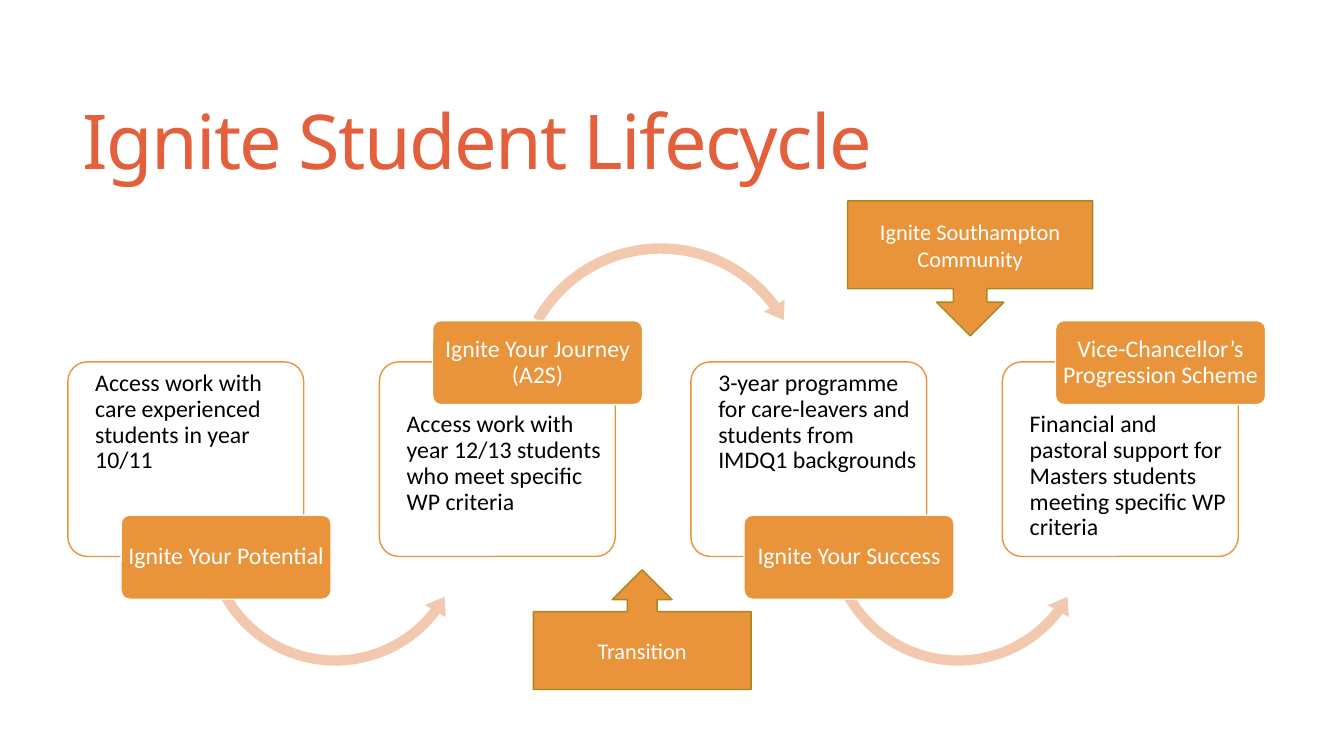
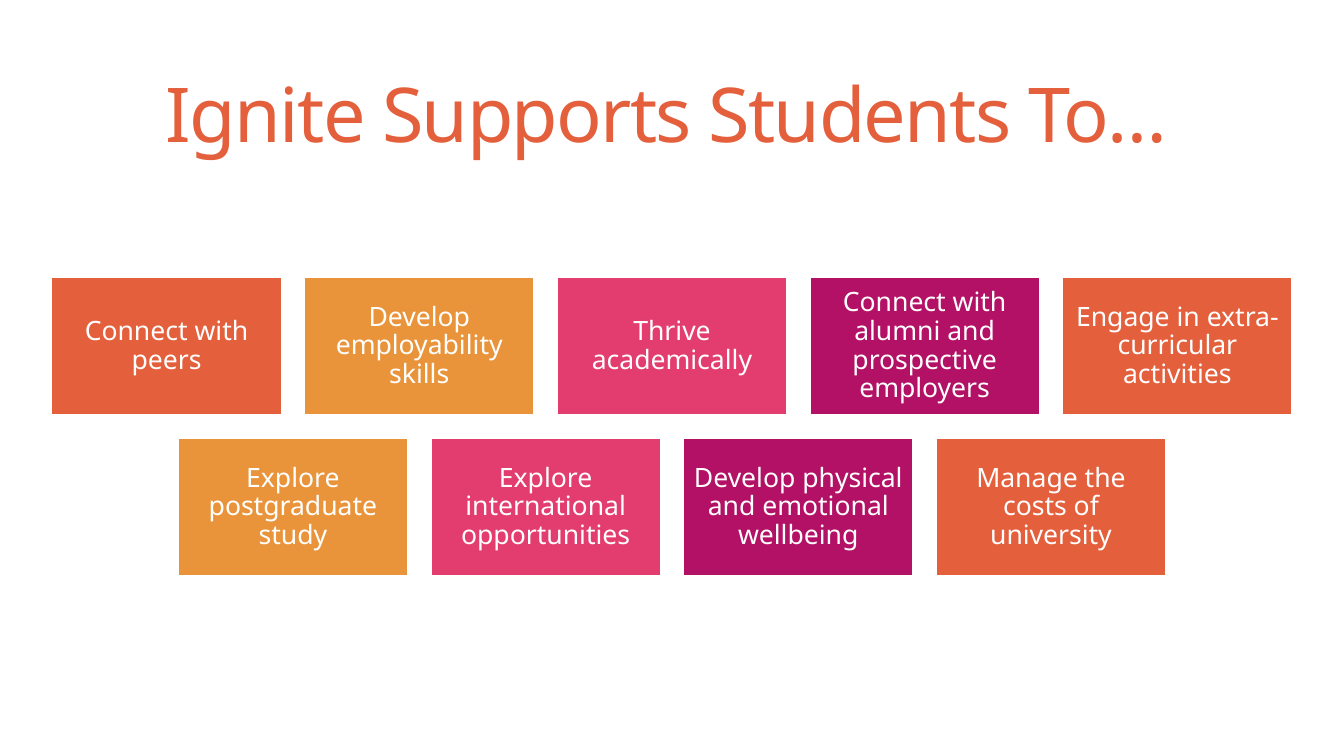
from pptx import Presentation
from pptx.dml.color import RGBColor
from pptx.enum.shapes import MSO_SHAPE
from pptx.enum.text import MSO_ANCHOR, PP_ALIGN
from pptx.util import Pt

CORAL, ORANGE, PINK, PURPLE = "E45F3C", "E9943A", "E33D6F", "B31166"
WHITE, BLACK, PEACH, OLIVE = "FFFFFF", "000000", "F2C8AF", "AA871E"


def write(sp, text, size, font, color, align=PP_ALIGN.CENTER, anchor=MSO_ANCHOR.MIDDLE,
          spacing=0.9, insets=(7.2, 3.6, 7.2, 3.6)):
    """Fill a shape with one paragraph; insets are left, top, right, bottom."""
    tf = sp.text_frame
    tf.word_wrap = True
    tf.vertical_anchor = anchor
    tf.margin_left, tf.margin_top, tf.margin_right, tf.margin_bottom = map(Pt, insets)
    p = tf.paragraphs[0]
    p.alignment = align
    p.line_spacing = spacing
    p.font.size = Pt(size)
    p.font.name = font
    p.font.color.rgb = RGBColor.from_string(color)
    r = p.add_run()
    r.text = text
    return p


def add_block(s, kind, box, fill, line=None, adjustments=()):
    sp = s.shapes.add_shape(kind, *map(Pt, box))
    sp.shadow.inherit = False
    sp.fill.solid()
    sp.fill.fore_color.rgb = RGBColor.from_string(fill)
    if line:
        sp.line.color.rgb = RGBColor.from_string(line)
        sp.line.width = Pt(1)
    else:
        sp.line.fill.background()
    for i, value in enumerate(adjustments):
        sp.adjustments[i] = value
    return sp


prs = Presentation()
prs.slide_width, prs.slide_height = Pt(960), Pt(540)

# Both slides carry the same title style
titles = [
    ("Ignite Student Lifecycle", 39.5, 130.5, PP_ALIGN.LEFT),
    ("Ignite Supports Students To…", 47.5, 75, PP_ALIGN.CENTER),
]
for text, top, height, align in titles:
    s = prs.slides.add_slide(prs.slide_layouts[6])
    title = s.shapes.add_textbox(Pt(52), Pt(top), Pt(848), Pt(height))
    p = write(title, text, 54, "Noto Sans", CORAL, align, spacing=0.85)
    p.runs[0]._r.get_or_add_rPr().set("spc", "-120")

lifecycle, supports = prs.slides

# Lifecycle: four stages, labels alternating below and above their cards
stages = [
    ("Ignite Your Potential", "Access work with care experienced students in year 10/11"),
    ("Ignite Your Journey (A2S)",
     "Access work with year 12/13 students who meet specific WP criteria"),
    ("Ignite Your Success",
     "3-year programme for care-leavers and students from IMDQ1 backgrounds"),
    ("Vice-Chancellor’s Progression Scheme",
     "Financial and pastoral support for Masters students meeting specific WP criteria"),
]
for i, (label, detail) in enumerate(stages):
    left = 48.5 + i * 222.5
    label_above = i % 2 == 1
    card = add_block(lifecycle, MSO_SHAPE.ROUNDED_RECTANGLE, (left, 258.5, 168.5, 139),
                     WHITE, ORANGE, [0.1])
    p = write(card, detail, 17, "Calibri", BLACK, PP_ALIGN.LEFT, MSO_ANCHOR.TOP,
              insets=(2, 32 if label_above else 2.5, 2, 2))
    pPr = p._p.get_or_add_pPr()
    pPr.set("marL", str(Pt(13.5)))
    pPr.set("indent", "0")

    if i < len(stages) - 1:
        if label_above:
            add_block(lifecycle, MSO_SHAPE.CIRCULAR_ARROW, (left + 91.5, 169, 219, 219),
                      PEACH, adjustments=[0.034, 4.171, 194.074, 125.755, 0.039])
        else:
            add_block(lifecycle, MSO_SHAPE.LEFT_CIRCULAR_ARROW, (left + 92.5, 283.5, 197, 197),
                      PEACH, adjustments=[0.037, 4.666, 22.421, 90.245, 0.044])

    tag = add_block(lifecycle, MSO_SHAPE.ROUNDED_RECTANGLE,
                    (left + 38, 229 if label_above else 368, 150, 60), ORANGE, WHITE, [0.1])
    write(tag, label, 17, "Calibri", WHITE, insets=(3, 1.5, 3, 1.5))

callouts = [
    ("Transition", MSO_SHAPE.UP_ARROW_CALLOUT, (381, 407, 155.5, 85.5)),
    ("Ignite Southampton Community", MSO_SHAPE.DOWN_ARROW_CALLOUT, (605.5, 143.5, 175, 96.5)),
]
for text, kind, box in callouts:
    callout = add_block(lifecycle, kind, box, ORANGE, OLIVE)
    write(callout, text, 16, "Calibri", WHITE, spacing=1.0)

# Supports: a row of five tiles over a centred row of four
tile_colors = [CORAL, ORANGE, PINK, PURPLE]
tiles = [
    "Connect with peers",
    "Develop employability skills",
    "Thrive academically",
    "Connect with alumni and prospective employers",
    "Engage in extra-curricular activities",
    "Explore postgraduate study",
    "Explore international opportunities",
    "Develop physical and emotional wellbeing",
    "Manage the costs of university",
]
columns, pitch = 5, 180.5
for i, text in enumerate(tiles):
    row, column = divmod(i, columns)
    box = (37 + (column + row / 2) * pitch, 198 + row * 115, 164, 98.5)
    tile = add_block(supports, MSO_SHAPE.RECTANGLE, box, tile_colors[i % 4], WHITE)
    write(tile, text, 19, "Noto Sans", WHITE, insets=(5.75,) * 4)

prs.save("out.pptx")
